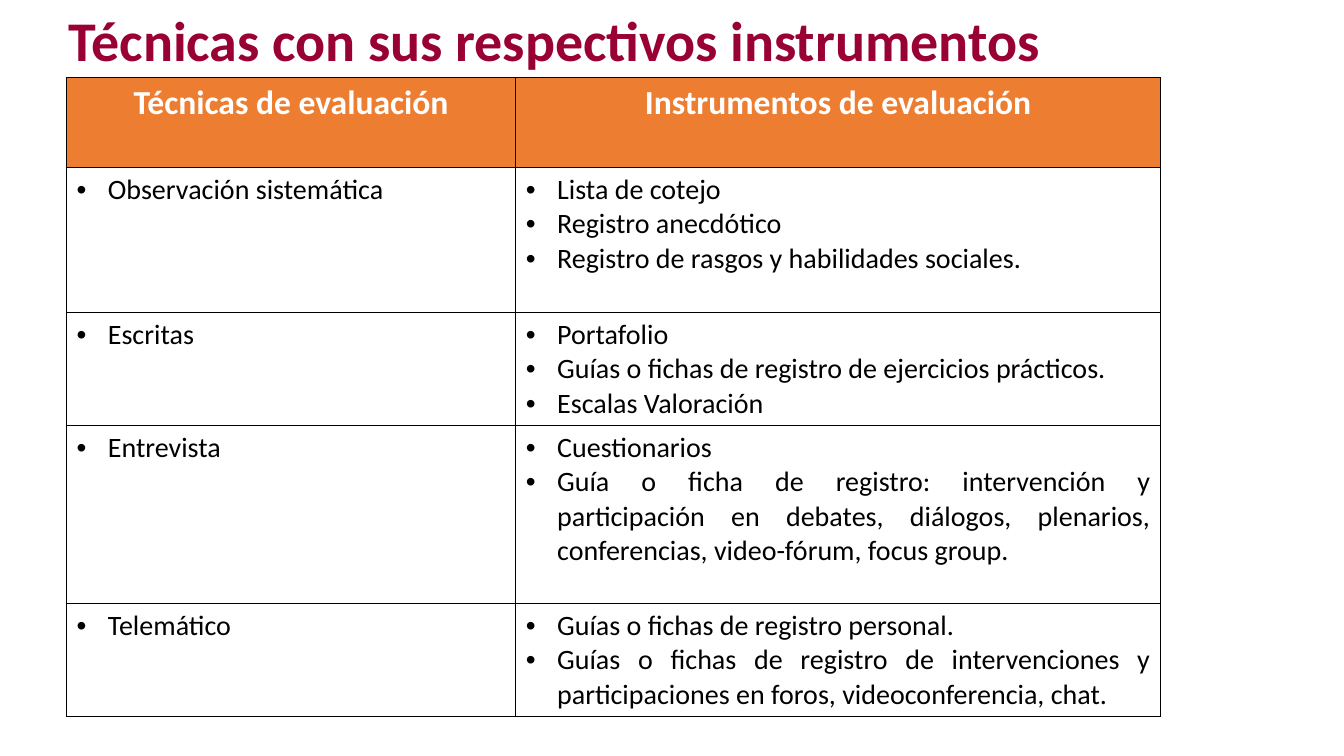
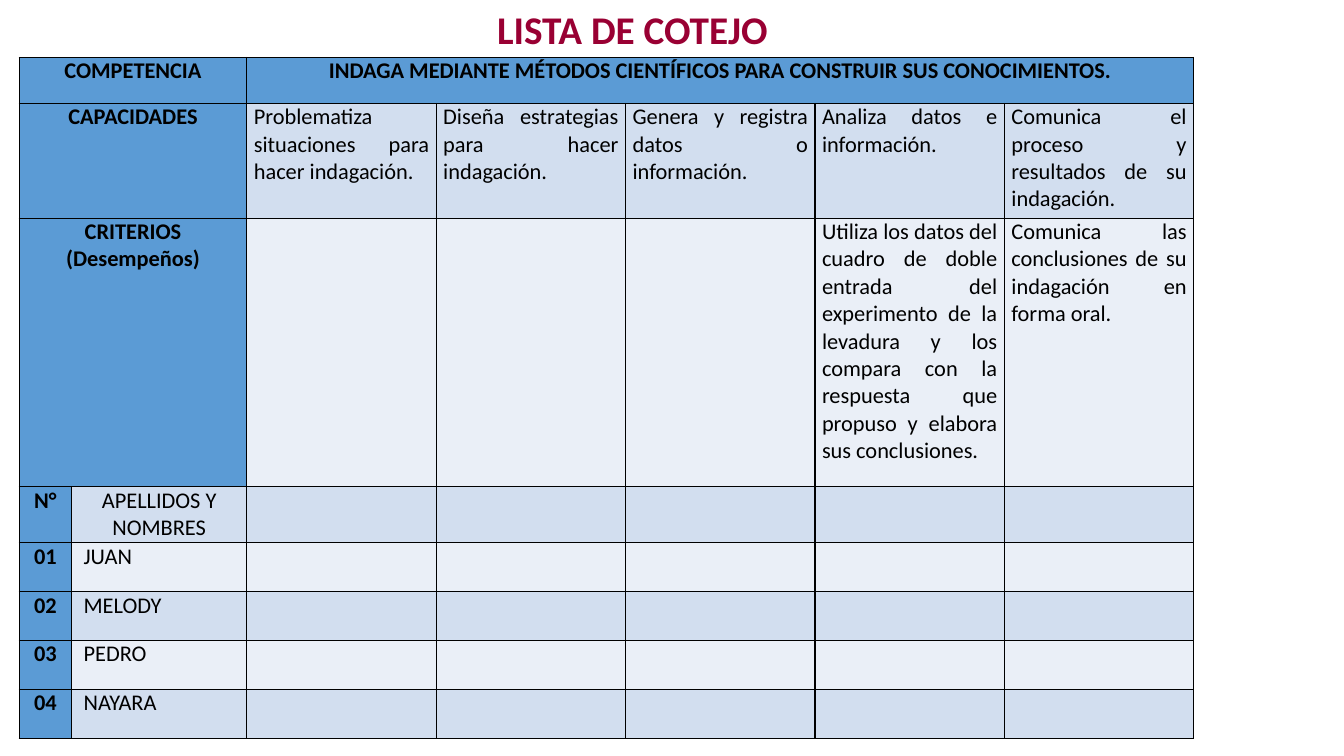
from lxml.etree import SubElement
from pptx import Presentation
from pptx.dml.color import RGBColor
from pptx.enum.text import MSO_ANCHOR, MSO_AUTO_SIZE, PP_ALIGN
from pptx.oxml.ns import qn
from pptx.util import Inches, Pt

FONT = "Calibri"
WINE, BLACK, WHITE = "990033", "000000", "FFFFFF"
ORANGE, BLUE, PALE, LIGHT = "ED7D31", "5B9BD5", "D2DEEF", "EAEFF7"
MID, FULL = PP_ALIGN.CENTER, PP_ALIGN.JUSTIFY

deck = Presentation()
deck.slide_width, deck.slide_height = Inches(13.33), Inches(7.5)


def style(par, size, tint, bold, align):
    par.alignment = align
    par.font.name = FONT
    par.font.size = Pt(size)
    par.font.bold = bold
    par.font.color.rgb = RGBColor.from_string(tint)


def fill_cell(cell, lines, size, tint, bold, align, paint, bullet=False):
    props = cell._tc.get_or_add_tcPr()
    for side in ("a:lnL", "a:lnR", "a:lnT", "a:lnB"):
        line = SubElement(props, qn(side), w=str(Pt(1)))
        solid = SubElement(line, qn("a:solidFill"))
        SubElement(solid, qn("a:srgbClr"), val=BLACK)
    if paint:
        cell.fill.solid()
        cell.fill.fore_color.rgb = RGBColor.from_string(paint)
    else:
        cell.fill.background()
    cell.text = "\n".join(lines)
    for par in cell.text_frame.paragraphs:
        if bullet:
            pad = par._p.get_or_add_pPr()
            pad.set("marL", str(Inches(0.31)))
            pad.set("indent", str(-Inches(0.31)))
            SubElement(pad, qn("a:buFont"), typeface="Arial")
            SubElement(pad, qn("a:buChar"), char="•")
        style(par, size, tint, bold, align)


tools = [
    (["Observación sistemática"],
     ["Lista de cotejo", "Registro anecdótico",
      "Registro de rasgos y habilidades sociales."]),
    (["Escritas"],
     ["Portafolio", "Guías o fichas de registro de ejercicios prácticos.",
      "Escalas Valoración"]),
    (["Entrevista"],
     ["Cuestionarios",
      "Guía o ficha de registro: intervención y participación en debates, "
      "diálogos, plenarios, conferencias, video-fórum, focus group."]),
    (["Telemático"],
     ["Guías o fichas de registro personal.",
      "Guías o fichas de registro de intervenciones y participaciones en "
      "foros, videoconferencia, chat."]),
]
skills = [
    "Problematiza situaciones para hacer indagación.",
    "Diseña estrategias para hacer indagación.",
    "Genera y registra datos o información.",
    "Analiza datos e información.",
    "Comunica el proceso y resultados de su indagación.",
]
goals = [
    "", "", "",
    "Utiliza los datos del cuadro de doble entrada del experimento de la "
    "levadura y los compara con la respuesta que propuso y elabora sus "
    "conclusiones.",
    "Comunica las conclusiones de su indagación en forma oral.",
]
names = ["JUAN", "MELODY", "PEDRO", "NAYARA"]

pages = [
    ("Técnicas con sus respectivos instrumentos", 40,
     (0.8, 0, 80.9, 10.3), (4.95, 10.3, 81.4, 84),
     [446, 640], [90, 145, 111, 178, 111]),
    ("LISTA DE COTEJO", 28,
     (34, 0, 26.1, 7.6), (1.43, 7.6, 87.4, 90.1),
     [52, 174] + [188] * 5, [46, 115, 269, 56] + [49] * 4),
]
tables = []
for text, size, head, area, cols, rows in pages:
    slide = deck.slides.add_slide(deck.slide_layouts[5])
    scale = [deck.slide_width / 100, deck.slide_height / 100] * 2
    title = slide.shapes.title
    title.left, title.top, title.width, title.height = [
        int(part * unit) for part, unit in zip(head, scale)]
    frame = title.text_frame
    frame.text = text
    frame.auto_size = MSO_AUTO_SIZE.NONE
    frame.vertical_anchor = MSO_ANCHOR.TOP
    style(frame.paragraphs[0], size, WINE, True, MID)
    box = [int(part * unit) for part, unit in zip(area, scale)]
    table = slide.shapes.add_table(len(rows), len(cols), *box).table
    table.first_row = table.horz_banding = False
    for col, share in zip(table.columns, cols):
        col.width = int(box[2] * share / sum(cols))
    for row, share in zip(table.rows, rows):
        row.height = int(box[3] * share / sum(rows))
    tables.append(table)

means, check = tables
for c, text in enumerate(["Técnicas de evaluación", "Instrumentos de evaluación"]):
    fill_cell(means.cell(0, c), [text], 24, WHITE, True, MID, ORANGE)
for r, pair in enumerate(tools, 1):
    for c, lines in enumerate(pair):
        fill_cell(means.cell(r, c), lines, 20, BLACK, False, FULL, None, True)

blank = [""] * 5
grid = [
    ["COMPETENCIA", "",
     "INDAGA MEDIANTE MÉTODOS CIENTÍFICOS PARA CONSTRUIR SUS CONOCIMIENTOS."]
    + blank[1:],
    ["CAPACIDADES", ""] + skills,
    ["CRITERIOS (Desempeños)", ""] + goals,
    ["N°", "APELLIDOS Y NOMBRES"] + blank,
]
grid += [[f"{n:02}", name] + blank for n, name in enumerate(names, 1)]
for r, row in enumerate(grid):
    for c, text in enumerate(row):
        cell = check.cell(r, c)
        key = r == 0 or c == 0
        paint = BLUE if key else PALE if r % 2 else LIGHT
        align = MID if key or (r, c) == (3, 1) else FULL
        fill_cell(cell, [text], 16, BLACK, key, align, paint)
        cell.margin_left = Inches(0.12 if c == 1 and r > 3 else 0.07)
        cell.margin_right = Inches(0.07)
        cell.margin_top = cell.margin_bottom = 0
for r in range(3):
    check.cell(r, 0).merge(check.cell(r, 1))
check.cell(0, 2).merge(check.cell(0, 6))

deck.save("out.pptx")
